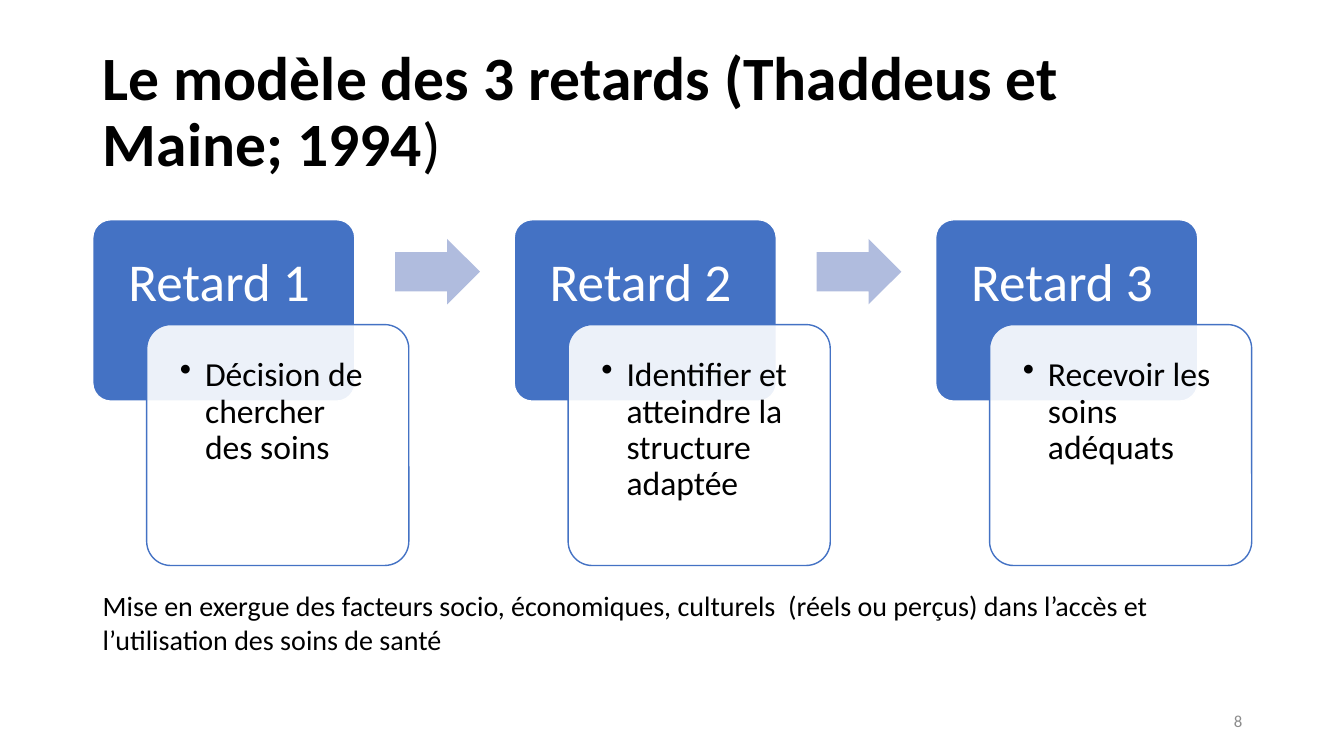
from lxml import etree
from pptx import Presentation
from pptx.dml.color import RGBColor
from pptx.enum.shapes import MSO_SHAPE
from pptx.enum.text import MSO_ANCHOR, MSO_AUTO_SIZE, PP_ALIGN
from pptx.oxml.ns import qn
from pptx.util import Inches, Pt

BLACK = RGBColor(0x00, 0x00, 0x00)
WHITE = RGBColor(0xFF, 0xFF, 0xFF)
BLUE = RGBColor(0x44, 0x72, 0xC4)
PALE_BLUE = RGBColor(0xB0, 0xBC, 0xDE)
GRAY = RGBColor(0x8C, 0x8C, 0x8C)
FONT = "Calibri"

DELAYS = [
    ("Retard 1", "Décision de chercher des soins"),
    ("Retard 2", "Identifier et atteindre la structure adaptée"),
    ("Retard 3", "Recevoir les soins adéquats"),
]
FIRST_LEFT, STEP = 0.92, 4.18
CARD_WIDTH = 2.6


def write(holder, *runs, size, color=BLACK, align=PP_ALIGN.LEFT,
          anchor=MSO_ANCHOR.TOP, spacing=1.0, insets=(0.1, 0.05, 0.1, 0.05)):
    """Fill one paragraph with (text, bold) runs and return it."""
    frame = holder.text_frame
    frame.word_wrap = True
    frame.auto_size = MSO_AUTO_SIZE.NONE
    frame.vertical_anchor = anchor
    (frame.margin_left, frame.margin_top,
     frame.margin_right, frame.margin_bottom) = map(Inches, insets)
    paragraph = frame.paragraphs[0]
    paragraph.alignment = align
    paragraph.line_spacing = spacing
    for text, bold in runs:
        run = paragraph.add_run()
        run.text = text
        run.font.name = FONT
        run.font.size = Pt(size)
        run.font.bold = bold
        run.font.color.rgb = color
    return paragraph


def add_bullet(paragraph, indent):
    properties = paragraph._p.get_or_add_pPr()
    properties.set("marL", str(Inches(indent)))
    properties.set("indent", str(-Inches(indent)))
    etree.SubElement(properties, qn("a:buChar")).set("char", "•")


def set_opacity(shape, percent):
    color = shape.fill._xPr.find(qn("a:solidFill"))[0]
    etree.SubElement(color, qn("a:alpha")).set("val", str(percent * 1000))


def add_block(slide, kind, box, adjustments, fill, line=None):
    block = slide.shapes.add_shape(kind, *map(Inches, box))
    block.shadow.inherit = False
    for index, value in enumerate(adjustments):
        block.adjustments[index] = value
    block.fill.solid()
    block.fill.fore_color.rgb = fill
    if line is None:
        block.line.fill.background()
    else:
        block.line.color.rgb = line
        block.line.width = Pt(1)
    return block


def add_delay(slide, left, name, description):
    heading = add_block(slide, MSO_SHAPE.ROUNDED_RECTANGLE,
                        (left, 2.18, CARD_WIDTH, 1.8), [0.1], BLUE, WHITE)
    write(heading, (name, False), size=38, color=WHITE, spacing=0.9,
          insets=(0.3, 0.3, 0.3, 0.16))

    detail = add_block(slide, MSO_SHAPE.ROUNDED_RECTANGLE,
                       (left + 0.535, 3.22, CARD_WIDTH, 2.39), [0.1], WHITE, BLUE)
    set_opacity(detail, 90)
    paragraph = write(detail, (description, False), size=24, spacing=0.9,
                      insets=(0.26, 0.26, 0.26, 0.26))
    add_bullet(paragraph, 0.25)


def add_note(slide, box, text, **text_format):
    note = slide.shapes.add_textbox(*map(Inches, box))
    write(note, (text, False), **text_format)


def main():
    prs = Presentation()
    prs.slide_width, prs.slide_height = Inches(13.33), Inches(7.5)
    slide = prs.slides.add_slide(prs.slide_layouts[5])

    # Title
    title = slide.shapes.title
    title.left, title.top = Inches(0.92), Inches(0.4)
    title.width, title.height = Inches(11.5), Inches(1.45)
    write(title, ("Le modèle des 3 retards (Thaddeus et Maine; 1994", True),
          (")", False), size=44, spacing=0.9, anchor=MSO_ANCHOR.MIDDLE)

    # Three delays, with an arrow between neighbours
    for index, (name, description) in enumerate(DELAYS):
        left = FIRST_LEFT + index * STEP
        add_delay(slide, left, name, description)
        if index < len(DELAYS) - 1:
            add_block(slide, MSO_SHAPE.RIGHT_ARROW, (left + 3, 2.37, 0.84, 0.65),
                      [0.6, 0.5], PALE_BLUE)

    # Slide number and closing remark
    add_note(slide, (9.42, 6.95, 3, 0.4), "8", size=12, color=GRAY,
             align=PP_ALIGN.RIGHT, anchor=MSO_ANCHOR.MIDDLE)
    add_note(slide, (0.92, 5.79, 10.96, 0.77),
             "Mise en exergue des facteurs socio, économiques, culturels  (réels ou "
             "perçus) dans l’accès et l’utilisation des soins de santé", size=20)

    prs.save("out.pptx")


if __name__ == "__main__":
    main()
